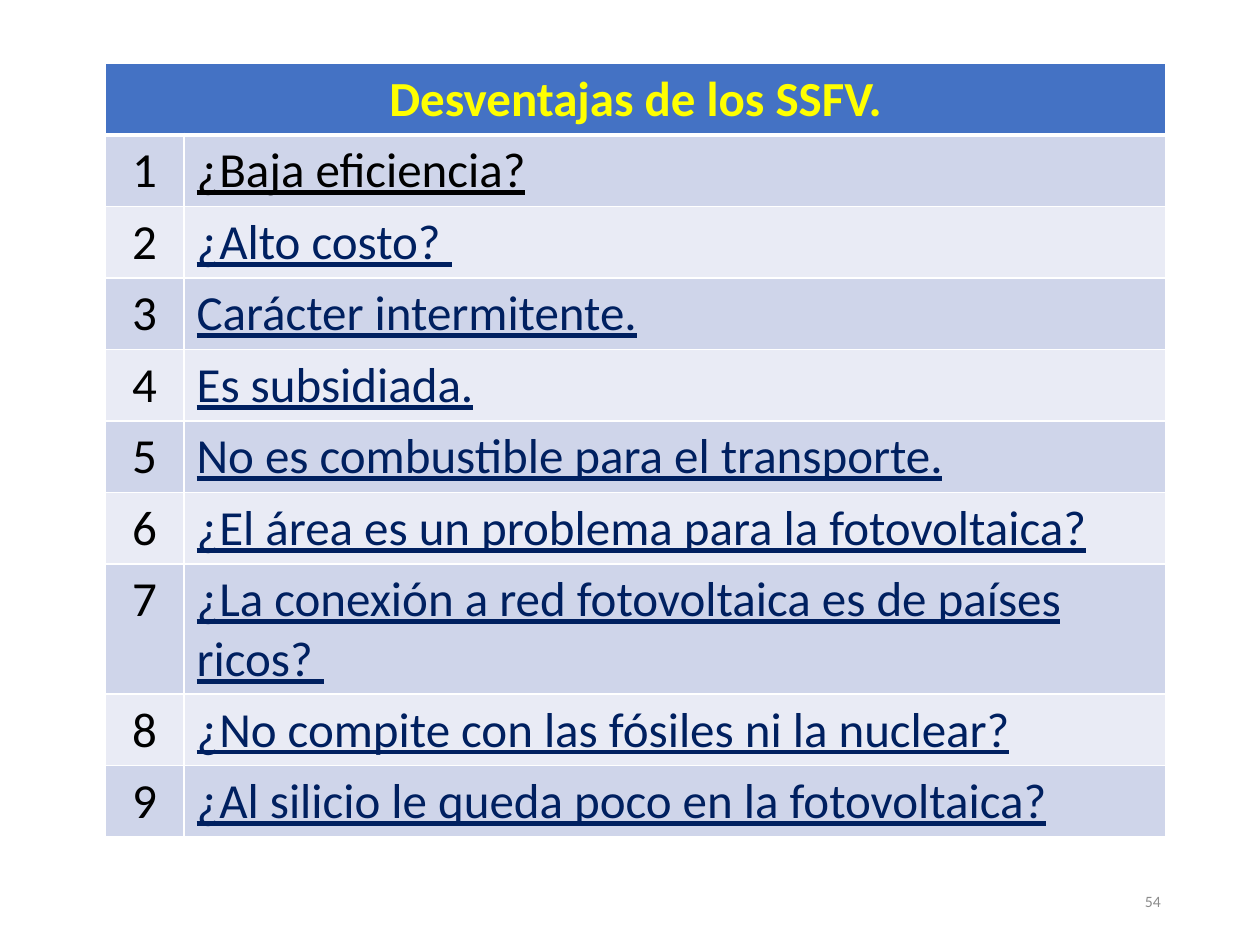
from lxml import etree
from pptx import Presentation
from pptx.dml.color import RGBColor
from pptx.enum.text import MSO_ANCHOR, PP_ALIGN
from pptx.oxml.ns import qn
from pptx.util import Cm, Pt

CENTER, LEFT, RIGHT = PP_ALIGN.CENTER, PP_ALIGN.LEFT, PP_ALIGN.RIGHT
MIDDLE = MSO_ANCHOR.MIDDLE

FONT = "Calibri"
COLORS = {
    "header": "4472C4", "title": "FFFF00", "odd": "CFD5EA", "even": "E9EBF5",
    "border": "FFFFFF", "text": "000000", "link": "002060", "number": "8C8C8C",
}
TITLE = "Desventajas de los SSFV."
DISADVANTAGES = [
    "¿Baja eficiencia?",
    "¿Alto costo? ",
    "Carácter intermitente.",
    "Es subsidiada.",
    "No es combustible para el transporte.",
    "¿El área es un problema para la fotovoltaica?",
    "¿La conexión a red fotovoltaica es de países ricos? ",
    "¿No compite con las fósiles ni la nuclear?",
    "¿Al silicio le queda poco en la fotovoltaica?",
]


def rgb(name):
    return RGBColor.from_string(COLORS[name])


def write(tf, text, size, color, align=LEFT, bold=False, underline=False):
    tf.text = text
    p = tf.paragraphs[0]
    p.alignment = align
    font = p.runs[0].font
    font.name, font.size = FONT, Pt(size)
    font.bold, font.underline = bold, underline
    font.color.rgb = rgb(color)


def style_cell(cell, fill, bottom=1):
    # Borders come before the fill in the cell properties
    tc_pr = cell._tc.get_or_add_tcPr()
    for side, width in (("L", 1), ("R", 1), ("T", 1), ("B", bottom)):
        ln = etree.SubElement(tc_pr, qn(f"a:ln{side}"), w=str(Pt(width)))
        solid = etree.SubElement(ln, qn("a:solidFill"))
        etree.SubElement(solid, qn("a:srgbClr"), val=COLORS["border"])
    cell.fill.solid()
    cell.fill.fore_color.rgb = rgb(fill)


def add_disadvantages(s, left, top, width, height):
    frame = s.shapes.add_table(len(DISADVANTAGES) + 1, 2, left, top, width, height)
    table = frame.table
    number_width = Cm(1.59)
    table.columns[0].width = number_width
    table.columns[1].width = width - number_width
    for row in table.rows:
        row.height = Cm(1.04)  # rows grow to fit their text
    frame.height = height

    # Header across both columns
    header = table.cell(0, 0)
    header.merge(table.cell(0, 1))
    for cell in table.rows[0].cells:
        style_cell(cell, "header", bottom=3)
    write(header.text_frame, TITLE, 28, "title", CENTER, bold=True)

    # Numbered rows with alternating bands
    for i, text in enumerate(DISADVANTAGES, 1):
        number, item = table.cell(i, 0), table.cell(i, 1)
        for cell in (number, item):
            style_cell(cell, "odd" if i % 2 else "even")
        write(number.text_frame, str(i), 28, "text", CENTER)
        write(item.text_frame, text, 28, "text" if i == 1 else "link", underline=True)


def add_page_number(s, left, top, width, height):
    tf = s.shapes.add_textbox(left, top, width, height).text_frame
    tf.word_wrap = True
    tf.vertical_anchor = MIDDLE
    write(tf, "54", 9, "number", RIGHT)


def main():
    prs = Presentation()
    prs.slide_width, prs.slide_height = Cm(25.4), Cm(19.05)
    s = prs.slides.add_slide(prs.slide_layouts[6])
    add_page_number(s, Cm(17.93), Cm(17.65), Cm(5.72), Cm(1.02))
    add_disadvantages(s, Cm(2.12), Cm(1.28), Cm(21.38), Cm(15.57))
    prs.save("out.pptx")


if __name__ == "__main__":
    main()
